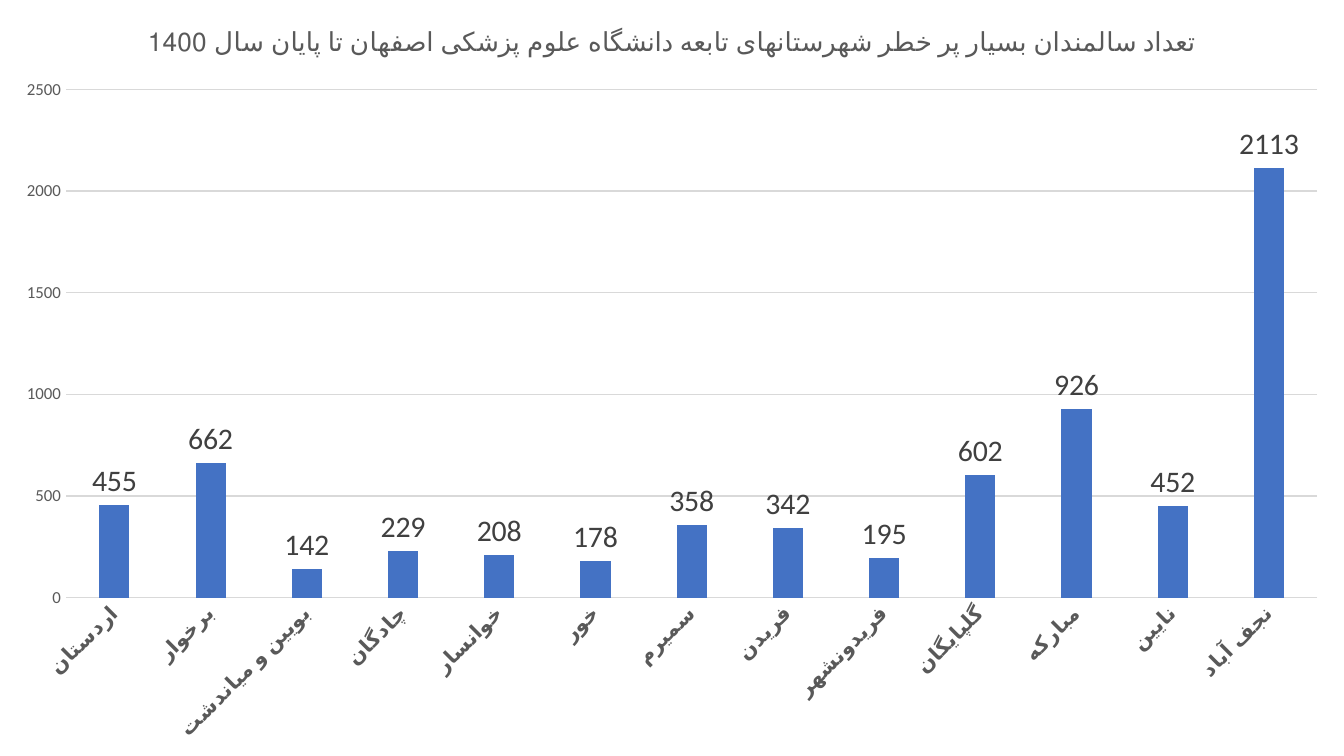
from dataclasses import dataclass
from typing import Any

from pptx import Presentation
from pptx.chart.data import CategoryChartData as ChartData
from pptx.dml.color import RGBColor
from pptx.enum.chart import XL_CHART_TYPE as ChartType
from pptx.enum.chart import XL_LABEL_POSITION as LabelPosition
from pptx.enum.chart import XL_TICK_MARK as TickMark
from pptx.util import Pt

WIDTH, HEIGHT = Pt(720), Pt(405)
GREY, RULE, BLUE, DARK = "595959", "D9D9D9", "4472C4", "404040"
TITLE = "تعداد سالمندان بسیار پر خطر شهرستانهای تابعه دانشگاه علوم پزشکی اصفهان تا پایان سال 1400"


@dataclass(frozen=True)
class County:
    name: str
    elders: int


COUNTIES = [
    County("اردستان", 455),
    County("برخوار", 662),
    County("بویین و میاندشت", 142),
    County("چادگان", 229),
    County("خوانسار", 208),
    County("خور", 178),
    County("سمیرم", 358),
    County("فریدن", 342),
    County("فریدونشهر", 195),
    County("گلپایگان", 602),
    County("مبارکه", 926),
    County("نایین", 452),
    County("نجف آباد", 2113),
]


def color(value: str) -> RGBColor:
    return RGBColor.from_string(value)


def apply(target: Any, values: dict[str, Any]) -> None:
    for name, value in values.items():
        setattr(target, name, value)


def style_font(font: Any, size: float, tint: str, bold: bool = False) -> None:
    apply(font, {"name": "Calibri", "size": Pt(size), "bold": bold})
    font.color.rgb = color(tint)


def style_line(line: Any) -> None:
    line.color.rgb = color(RULE)
    line.width = Pt(0.75)


def write_title(chart: Any) -> None:
    chart.has_title = True
    chart.chart_title.include_in_layout = False
    para = chart.chart_title.text_frame.paragraphs[0]
    span = para.add_run()
    span.text = TITLE
    style_font(para.font, 14, GREY)
    style_font(span.font, 14, GREY)
    para._p.get_or_add_pPr().set("rtl", "1")


def style_axes(chart: Any) -> None:
    names, counts = chart.category_axis, chart.value_axis
    ticks = {"major_tick_mark": TickMark.NONE, "minor_tick_mark": TickMark.NONE}
    apply(names, ticks | {"has_major_gridlines": False})
    apply(counts, ticks | {
        "has_major_gridlines": True,
        "minimum_scale": 0,
        "maximum_scale": 2500,
        "major_unit": 500,
    })
    style_font(names.tick_labels.font, 11, GREY, bold=True)
    style_font(counts.tick_labels.font, 9, GREY)
    style_line(names.format.line)
    style_line(counts.major_gridlines.format.line)
    counts.format.line.fill.background()
    body = names._element.xpath("c:txPr/a:bodyPr")[0]
    body.set("rot", "-2700000")
    body.set("vert", "horz")


def style_columns(chart: Any) -> None:
    plot = chart.plots[0]
    apply(plot, {
        "gap_width": 219,
        "overlap": -27,
        "vary_by_categories": False,
        "has_data_labels": True,
    })
    apply(plot.data_labels, {
        "show_value": True,
        "position": LabelPosition.OUTSIDE_END,
    })
    style_font(plot.data_labels.font, 16, DARK)
    fill = plot.series[0].format.fill
    fill.solid()
    fill.fore_color.rgb = color(BLUE)


def main() -> None:
    deck = Presentation()
    apply(deck, {"slide_width": WIDTH, "slide_height": HEIGHT})
    page = deck.slides.add_slide(deck.slide_layouts[6])
    data = ChartData()
    data.categories = [county.name for county in COUNTIES]
    data.add_series("Series 1", [county.elders for county in COUNTIES])
    chart = page.shapes.add_chart(
        ChartType.COLUMN_CLUSTERED, Pt(0), Pt(0), WIDTH, HEIGHT, data
    ).chart
    chart.has_legend = False
    style_font(chart.font, 10, "000000")
    write_title(chart)
    style_axes(chart)
    style_columns(chart)
    deck.save("out.pptx")


if __name__ == "__main__":
    main()
